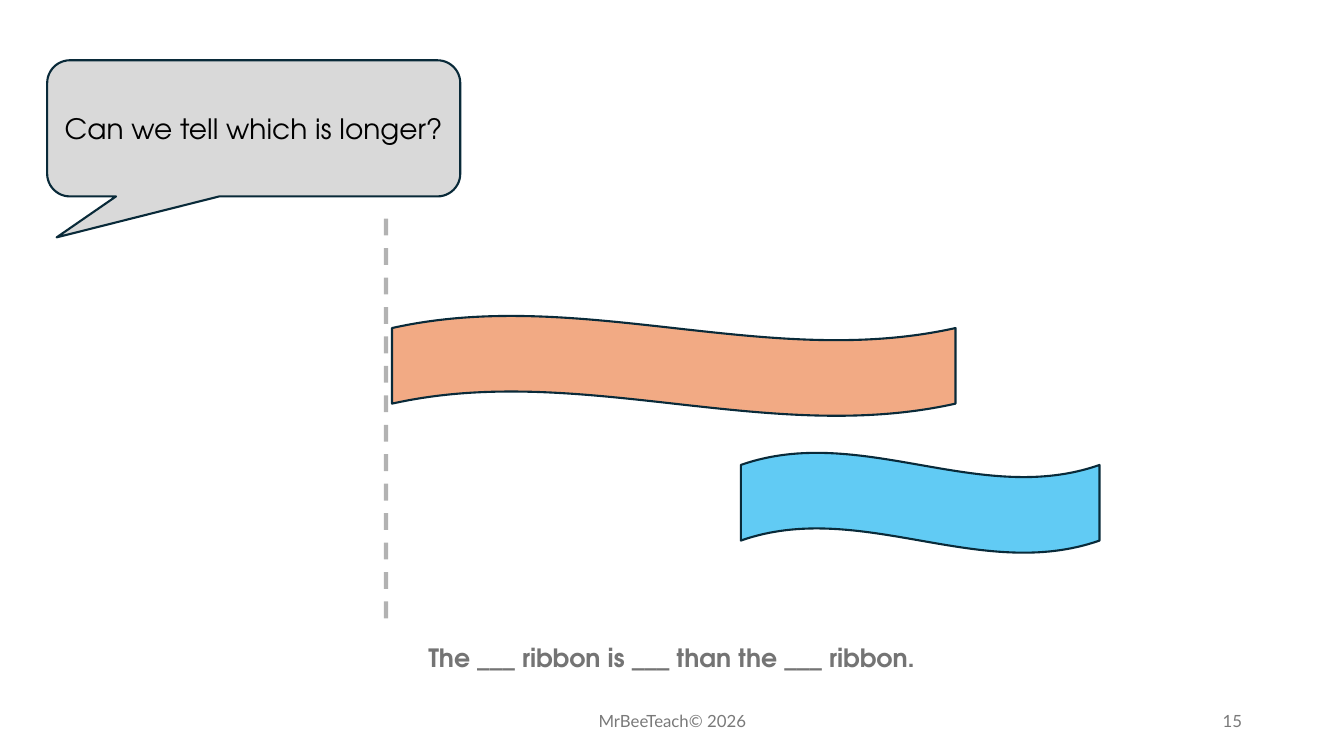
"""Build a slide that asks pupils to compare the lengths of two ribbons."""
from dataclasses import dataclass

from lxml.etree import SubElement
from pptx import Presentation
from pptx.dml.color import RGBColor as Rgb
from pptx.enum.dml import MSO_LINE_DASH_STYLE as Dash
from pptx.enum.shapes import MSO_CONNECTOR as Connector, MSO_SHAPE as Shape
from pptx.enum.text import MSO_ANCHOR as Anchor, PP_ALIGN as Align
from pptx.oxml.ns import qn
from pptx.util import Cm, Pt


@dataclass(frozen=True)
class Theme:
    """Colours, fonts and sizes of the slide."""
    outline: str = "092A39"
    bubble: str = "D9D9D9"
    ink: str = "000000"
    sentence: str = "747474"
    footer: str = "797979"
    lesson_font: str = "TeX Gyre Adventor"
    footer_font: str = "Lato"
    question_size: int = 20
    sentence_size: int = 18
    footer_size: int = 12
    outline_width: float = 1.5
    guide_width: float = 3
    guide_alpha: int = 30000


THEME = Theme()
SLIDE_SIZE = (33.87, 19.05)

QUESTION = ("Can we tell which is longer?", (1.19, 1.52, 10.41, 3.43))
TAIL = (-0.477, 0.801, 0.167)
SENTENCE = ("The ___ ribbon is ___ than the ___ ribbon.", (8.46, 16.05, 16.94, 1.02))
RIBBON_HEIGHT = 2.54
RIBBONS = [
    {"left": 9.88, "top": 7.95, "length": 14.2, "colour": "F2AA84"},
    {"left": 18.67, "top": 11.4, "length": 9.04, "colour": "61CBF4"},
]
GUIDE = {"x": 9.73, "top": 5.51, "bottom": 15.65}
FOOTER_TOP, FOOTER_HEIGHT = 17.65, 1.02
FOOTERS = [
    ("MrBeeTeach© 2026", 11.23, 11.43, Align.CENTER),
    ("15", 23.93, 7.62, Align.RIGHT),
]


def write(holder, text, *, size, colour, font=THEME.lesson_font, bold=False,
          align=Align.CENTER, anchor=Anchor.MIDDLE):
    """Put one formatted line of text into a shape."""
    frame = holder.text_frame
    frame.word_wrap = True
    frame.vertical_anchor = anchor
    line = frame.paragraphs[0]
    line.alignment = align
    run = line.add_run()
    run.text = text
    run.font.name = font
    run.font.size = Pt(size)
    run.font.bold = bold
    run.font.color.rgb = Rgb.from_string(colour)


def add_outlined(slide, kind, box, colour):
    """Add a filled preset shape with the dark outline."""
    shape = slide.shapes.add_shape(kind, *map(Cm, box))
    shape.shadow.inherit = False
    shape.fill.solid()
    shape.fill.fore_color.rgb = Rgb.from_string(colour)
    shape.line.color.rgb = Rgb.from_string(THEME.outline)
    shape.line.width = Pt(THEME.outline_width)
    return shape


def add_guide(slide):
    """Add the faint dashed line where a ribbon should start."""
    x = Cm(GUIDE["x"])
    guide = slide.shapes.add_connector(
        Connector.STRAIGHT, x, Cm(GUIDE["top"]), x, Cm(GUIDE["bottom"]))
    guide.line.color.rgb = Rgb.from_string(THEME.ink)
    guide.line.width = Pt(THEME.guide_width)
    guide.line.dash_style = Dash.DASH
    properties = guide.line._ln.getparent()
    colour = properties.find(".//" + qn("a:srgbClr"))
    SubElement(colour, qn("a:alpha")).set("val", str(THEME.guide_alpha))
    SubElement(properties, qn("a:effectLst"))


def main():
    """Compose and save the slide."""
    deck = Presentation()
    deck.slide_width, deck.slide_height = map(Cm, SLIDE_SIZE)
    slide = deck.slides.add_slide(deck.slide_layouts[6])

    for text, left, width, align in FOOTERS:
        footer = slide.shapes.add_textbox(
            *map(Cm, (left, FOOTER_TOP, width, FOOTER_HEIGHT)))
        write(footer, text, size=THEME.footer_size, colour=THEME.footer,
              font=THEME.footer_font, align=align)

    text, box = SENTENCE
    sentence = slide.shapes.add_textbox(*map(Cm, box))
    write(sentence, text, size=THEME.sentence_size, colour=THEME.sentence,
          bold=True, anchor=Anchor.TOP)

    for ribbon in RIBBONS:
        box = (ribbon["left"], ribbon["top"], ribbon["length"], RIBBON_HEIGHT)
        add_outlined(slide, Shape.WAVE, box, ribbon["colour"])

    text, box = QUESTION
    bubble = add_outlined(slide, Shape.ROUNDED_RECTANGULAR_CALLOUT, box, THEME.bubble)
    for index, value in enumerate(TAIL):
        bubble.adjustments[index] = value
    write(bubble, text, size=THEME.question_size, colour=THEME.ink)

    add_guide(slide)
    deck.save("out.pptx")


if __name__ == "__main__":
    main()
